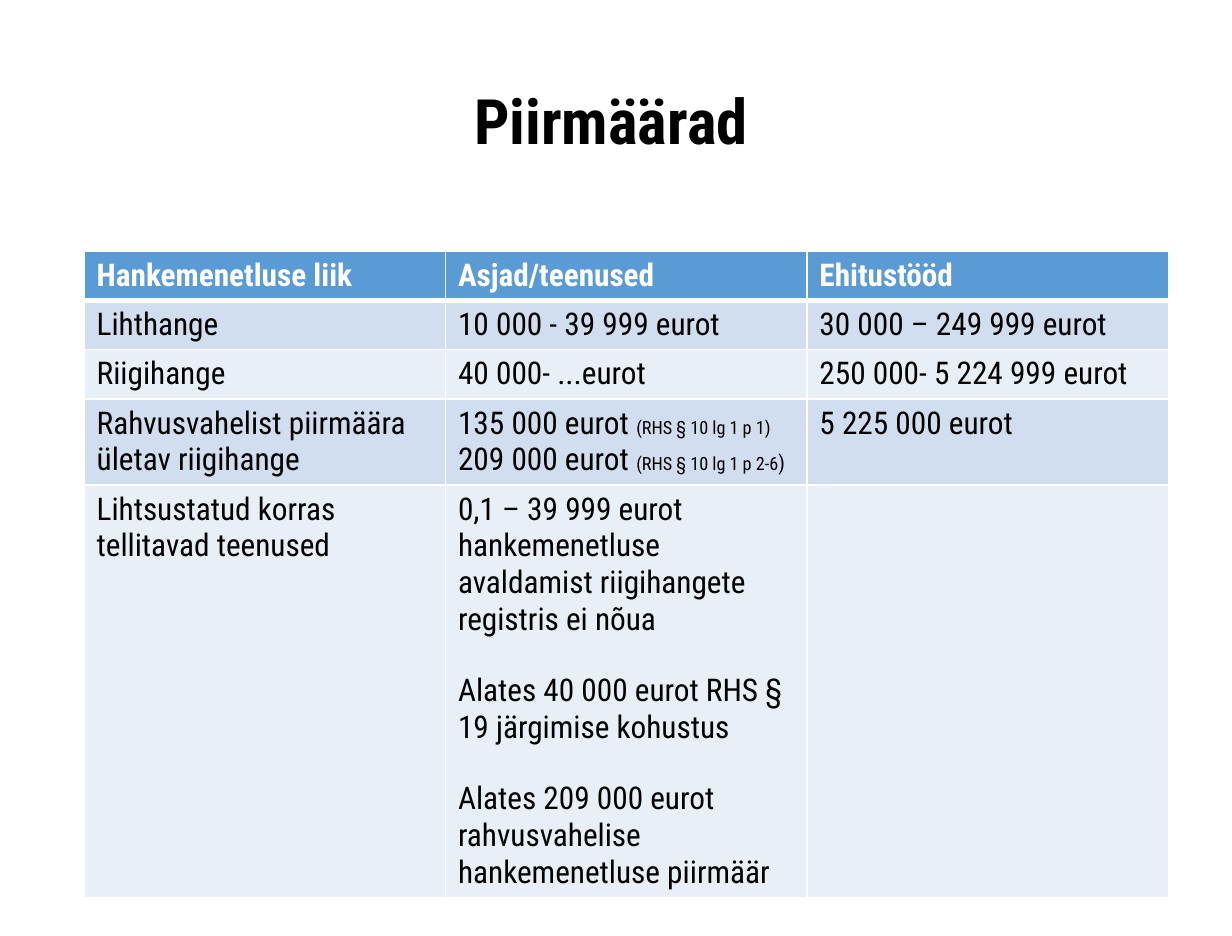
"""Build the slide of procurement thresholds."""
import dataclasses

import pptx
import pptx.dml.color
import pptx.enum.text
import pptx.oxml
import pptx.oxml.ns
import pptx.util


@dataclasses.dataclass(frozen=True)
class Theme:
    """Colours, font and type sizes of the slide."""
    font: str = "Roboto Condensed"
    ink: str = "000000"
    paper: str = "FFFFFF"
    header: str = "5B9BD5"
    bands: tuple = ("D1DEEF", "E9EFF7")
    title: float = 36
    body: float = 18
    bracket: float = 12
    note: float = 10.5
    gap: float = 20
    thin: float = 0.96
    thick: float = 3


def write(paragraph, text, *, theme, size, color, bold=False):
    """Add a formatted run of text to a paragraph."""
    run = paragraph.add_run()
    run.text = text
    run.font.name = theme.font
    run.font.size = pptx.util.Pt(size)
    run.font.bold = bold
    run.font.color.rgb = pptx.dml.color.RGBColor.from_string(color)


class Deck:
    """A slide with its style and a grid of 12 columns by 12 rows."""

    def __init__(self, theme, width, height):
        """Open a title-only slide of the given size."""
        self.theme = theme
        self.show = pptx.Presentation()
        self.show.slide_width = width
        self.show.slide_height = height
        self.slide = self.show.slides.add_slide(self.show.slide_layouts[5])

    def across(self, columns):
        """Turn grid columns into a length."""
        return round(self.show.slide_width * columns / 12)

    def down(self, rows):
        """Turn grid rows into a length."""
        return round(self.show.slide_height * rows / 12)

    def title(self, text, left, top, width, height):
        """Place and format the title placeholder."""
        heading = self.slide.shapes.title
        heading.left, heading.top = self.across(left), self.down(top)
        heading.width, heading.height = self.across(width), self.down(height)
        frame = heading.text_frame
        frame.margin_left = frame.margin_right = frame.margin_bottom = 0
        frame.margin_top = pptx.util.Inches(0.06)
        frame.vertical_anchor = pptx.enum.text.MSO_ANCHOR.TOP
        frame.auto_size = pptx.enum.text.MSO_AUTO_SIZE.NONE
        paragraph = frame.paragraphs[0]
        paragraph.alignment = pptx.enum.text.PP_ALIGN.CENTER
        write(paragraph, text, theme=self.theme, size=self.theme.title,
              color=self.theme.ink, bold=True)

    def borders(self, cell, **widths):
        """Draw the cell's edges in the paper colour."""
        properties = cell._tc.get_or_add_tcPr()
        for edge, width in widths.items():
            properties.append(pptx.oxml.parse_xml(
                f'<a:ln{edge} {pptx.oxml.ns.nsdecls("a")} w="{pptx.util.Pt(width)}">'
                f'<a:solidFill><a:srgbClr val="{self.theme.paper}"/></a:solidFill>'
                f'</a:ln{edge}>'))

    def cell(self, cell, paragraphs, is_header, below_header, fill):
        """Style one cell and write its paragraphs of (text, size) runs."""
        theme = self.theme
        self.borders(cell, L=theme.thin, R=theme.thin,
                     T=theme.thick if below_header else theme.thin,
                     B=theme.thick if is_header else theme.thin)
        cell.fill.solid()
        cell.fill.fore_color.rgb = pptx.dml.color.RGBColor.from_string(fill)
        frame = cell.text_frame
        for index, (space, runs) in enumerate(paragraphs):
            paragraph = frame.add_paragraph() if index else frame.paragraphs[0]
            paragraph.space_before = pptx.util.Pt(space)
            for text, size in runs:
                write(paragraph, text, theme=theme, size=size, bold=is_header,
                      color=theme.paper if is_header else theme.ink)

    def table(self, rows, left, top, width, heights):
        """Add a banded table with equal columns."""
        theme = self.theme
        grid = self.slide.shapes.add_table(
            len(rows), len(rows[0]), self.across(left), self.down(top),
            self.across(width), self.down(sum(heights))).table
        for index, (row, height) in enumerate(zip(rows, heights)):
            grid.rows[index].height = self.down(height)
            fill = theme.bands[(index - 1) % 2] if index else theme.header
            for column, content in enumerate(row):
                if isinstance(content, str):
                    content = [(0, [(content, theme.body)])] if content else []
                self.cell(grid.cell(index, column), content, index == 0,
                          index == 1, fill)


def main():
    """Compose and save the slide."""
    theme = Theme()
    deck = Deck(theme, pptx.util.Cm(25), pptx.util.Cm(19))
    deck.title("Piirmäärad", 0.67, 0.95, 10.56, 1.14)
    international = [
        (0, [("135 000 eurot ", theme.body), ("(RHS § 10 lg 1 p 1)", theme.note)]),
        (0, [("209 000 eurot ", theme.body), ("(RHS § 10 lg 1 p 2-6", theme.note),
             (")", theme.bracket)]),
    ]
    simplified = [(space, [(text, theme.body)]) for space, text in (
        (0, "0,1 – 39 999 eurot hankemenetluse avaldamist riigihangete registris ei nõua"),
        (theme.gap, "Alates 40 000 eurot RHS § 19 järgimise kohustus"),
        (theme.gap, "Alates 209 000 eurot rahvusvahelise hankemenetluse piirmäär"),
    )]
    thresholds = [
        ["Hankemenetluse liik", "Asjad/teenused", "Ehitustööd"],
        ["Lihthange", "10 000 - 39 999 eurot", "30 000 – 249 999 eurot"],
        ["Riigihange", "40 000- ...eurot", "250 000- 5 224 999 eurot"],
        ["Rahvusvahelist piirmäära ületav riigihange", international,
         "5 225 000 eurot"],
        ["Lihtsustatud korras tellitavad teenused", simplified, ""],
    ]
    deck.table(thresholds, 0.82, 3.22, 10.56,
               heights=[0.63, 0.63, 0.63, 1.09, 5.28])
    deck.show.save("out.pptx")


if __name__ == "__main__":
    main()
